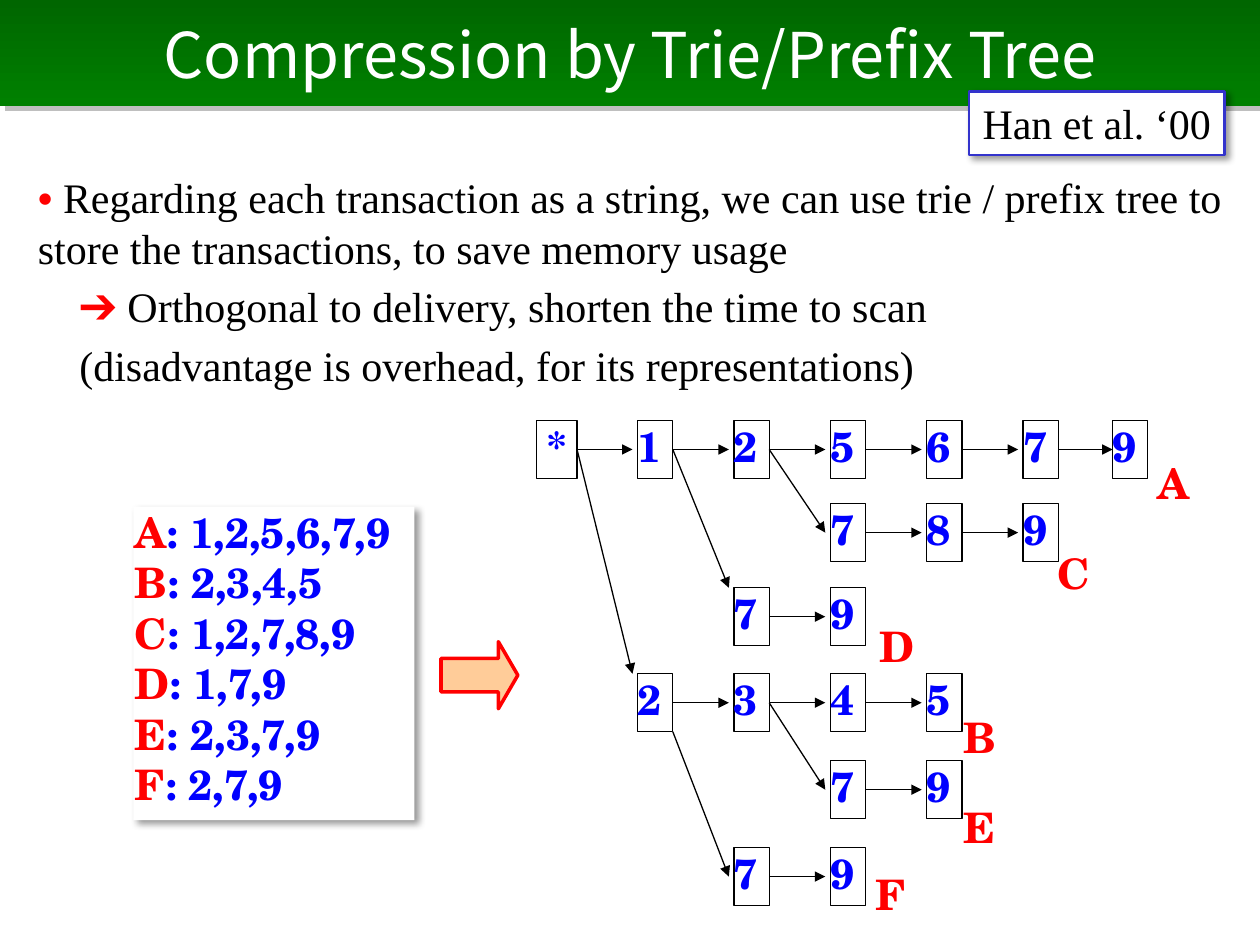
from dataclasses import dataclass
from lxml.etree import SubElement
from pptx import Presentation
from pptx.dml.color import RGBColor
from pptx.enum.shapes import MSO_CONNECTOR, MSO_SHAPE
from pptx.enum.text import MSO_ANCHOR, MSO_AUTO_SIZE, PP_ALIGN
from pptx.oxml.ns import qn
from pptx.util import Inches, Pt


@dataclass
class Theme:
    dark: str = "006600"
    green: str = "008000"
    white: str = "FFFFFF"
    black: str = "000000"
    grey: str = "808080"
    red: str = "FF0000"
    blue: str = "0000FF"
    frame: str = "3333CC"
    peach: str = "FFCC99"
    head: str = "Noto Sans CJK JP"
    serif: str = "Times New Roman"
    school: str = "TeX Gyre Schola"
    big: int = 36
    mid: int = 24
    thin: float = 0.75


theme = Theme()
hue = RGBColor.from_string
deck = Presentation()
deck.slide_width, deck.slide_height = Inches(10), Inches(7.5)
slide = deck.slides.add_slide(deck.slide_layouts[0])
shapes = slide.shapes


def place(*spots):
    """Turn x, y pairs in percent of the slide's size into lengths."""
    sides = (deck.slide_width, deck.slide_height)
    return [int(spot * sides[i % 2] / 100) for i, spot in enumerate(spots)]


def write(shape, *lines, font=theme.school, size=theme.mid, bold=True,
          align=PP_ALIGN.JUSTIFY, anchor=MSO_ANCHOR.TOP, inset=None,
          wrap=True, before=0):
    """Fill a shape with lines, each a list of (text, colour) runs."""
    frame = shape.text_frame
    frame.auto_size = MSO_AUTO_SIZE.NONE
    frame.word_wrap, frame.vertical_anchor = wrap, anchor
    if inset is not None:
        frame.margin_left = frame.margin_right = Inches(inset)
        frame.margin_top = frame.margin_bottom = 0
    for i, line in enumerate(lines):
        para = frame.add_paragraph() if i else frame.paragraphs[0]
        para.alignment, para.space_before = align, Pt(before)
        for text, color in line:
            run = para.add_run()
            run.text = text
            run.font.name, run.font.size = font, Pt(size)
            run.font.bold, run.font.color.rgb = bold, hue(color)


# Title bar and body
title, body = slide.placeholders
title.left, title.top, title.width, title.height = place(0, 0, 100, 11.2)
title.fill.gradient()
title.fill.gradient_angle = 270
for stop, color in zip(title.fill.gradient_stops, (theme.dark, theme.green)):
    stop.color.rgb = hue(color)
write(title, [("Compression by Trie/Prefix Tree", theme.white)],
      font=theme.head, size=theme.big, bold=False,
      align=PP_ALIGN.CENTER, anchor=MSO_ANCHOR.MIDDLE)

body.left, body.top, body.width, body.height = place(2, 17.5, 96.1, 24.1)
write(body,
      [("• ", theme.red),
       ("Regarding each transaction as a string, we can use trie / prefix "
        "tree to store the transactions, to save memory usage", theme.black)],
      [("➔ ", theme.red),
       ("Orthogonal to delivery, shorten the time to scan", theme.black)],
      [("(disadvantage is overhead, for its representations)", theme.black)],
      font=theme.serif, bold=False, align=PP_ALIGN.LEFT, before=4.8)
paras = body.text_frame.paragraphs
for para in paras[:2]:
    para.runs[0].font.bold = True
for para in paras[1:]:
    para._p.get_or_add_pPr().set("marL", str(Inches(0.33)))

# Trie nodes: row, first column, keys, then the label and its place
rows = [44.5, 53.3, 62.2, 71.3, 80.5, 89.7]
cols = [42.6] + [50.6 + 7.65 * i for i in range(5)] + [88.3]
wide, tall = 2.8, 6.13
chains = [
    (0, 0, "*125679", "A", 91.5, 48.4),
    (1, 3, "789", "C", 83.5, 57.9),
    (2, 2, "79", "D", 69.4, 65.7),
    (3, 1, "2345", "B", 76.1, 75.3),
    (4, 3, "79", "E", 76.1, 84.8),
    (5, 2, "79", "F", 69.1, 91.9),
]
nodes, edges = {}, []
for row, first, keys, name, x, y in chains:
    for col, key in enumerate(keys, first):
        root = key == "*"
        node = shapes.add_shape(MSO_SHAPE.RECTANGLE, *place(
            cols[col], rows[row], 3.2 if root else wide, tall))
        node.shadow.inherit = False
        node.fill.solid()
        node.fill.fore_color.rgb = hue(theme.white)
        node.line.color.rgb, node.line.width = hue(theme.black), Pt(theme.thin)
        write(node, [(key, theme.blue)], inset=0,
              align=PP_ALIGN.CENTER if root else PP_ALIGN.JUSTIFY)
        nodes[row, col] = node
        if col > first:
            edges.append(((row, col - 1), (row, col), 0.5, 0.5))
    label = shapes.add_textbox(*place(x, y, 4.2, 5.4))
    write(label, [(name, theme.red)], inset=0.04, wrap=False)

# Edges: parent, child, and how far down each side the arrow meets it
edges += [
    ((0, 0), (3, 1), 0.5, 0),
    ((0, 1), (2, 2), 0.5, 0),
    ((0, 2), (1, 3), 0.5, 0.5),
    ((3, 2), (4, 3), 0.5, 0.5),
    ((3, 1), (5, 2), 1, 0.5),
]
for start, end, leave, reach in edges:
    line = shapes.add_connector(MSO_CONNECTOR.STRAIGHT, *place(
        cols[start[1]] + wide, rows[start[0]] + leave * tall,
        cols[end[1]] - 0.4, rows[end[0]] + reach * tall))
    if leave == 0.5:
        line.begin_connect(nodes[start], 3)
    if end == (0, 6):
        line.end_connect(nodes[end], 1)
    line.line.color.rgb, line.line.width = hue(theme.black), Pt(theme.thin)
    SubElement(line.line._get_or_add_ln(), qn("a:tailEnd"), type="triangle")
    SubElement(line._element.spPr, qn("a:effectLst"))

# Transactions, block arrow and citation
table = shapes.add_shape(MSO_SHAPE.RECTANGLE, *place(10.6, 53.6, 22.3, 33.2))
arrow = shapes.add_shape(MSO_SHAPE.RIGHT_ARROW, *place(35, 67.9, 6.1, 7.1))
arrow.adjustments[0], arrow.adjustments[1] = 0.5, 0.29
cite = shapes.add_shape(MSO_SHAPE.RECTANGLE, *place(76.9, 9.7, 20.3, 6.7))
for shape, fill, edge, width in (
        (table, theme.white, None, 0),
        (arrow, theme.peach, theme.red, 2),
        (cite, theme.white, theme.frame, 1.5)):
    shape.shadow.inherit = False
    shape.fill.solid()
    shape.fill.fore_color.rgb = hue(fill)
    if edge:
        shape.line.color.rgb, shape.line.width = hue(edge), Pt(width)
    else:
        shape.line.fill.background()

sets = {"A": "1,2,5,6,7,9", "B": "2,3,4,5", "C": "1,2,7,8,9",
        "D": "1,7,9", "E": "2,3,7,9", "F": "2,7,9"}
write(table, *([(name, theme.red), (": " + items, theme.blue)]
               for name, items in sets.items()), inset=0.01)
write(cite, [("Han et al. ‘00", theme.black)], font=theme.serif, bold=False,
      align=PP_ALIGN.CENTER, wrap=False)

# Shadows: colour, opacity in percent, blur and distance in points
for shape, color, alpha, blur, gap in (
        (title, theme.grey, 50, 0, 4.2),
        (table, theme.black, 40, 4, 3),
        (cite, theme.black, 40, 4, 3)):
    shape.shadow.inherit = False
    effect = shape._element.spPr.find(qn("a:effectLst"))
    cast = SubElement(effect, qn("a:outerShdw"), blurRad=str(Pt(blur)),
                      dist=str(Pt(gap)), dir="2700000", algn="tl",
                      rotWithShape="0")
    tint = SubElement(cast, qn("a:srgbClr"), val=color)
    SubElement(tint, qn("a:alpha"), val=str(alpha * 1000))

deck.save("out.pptx")
